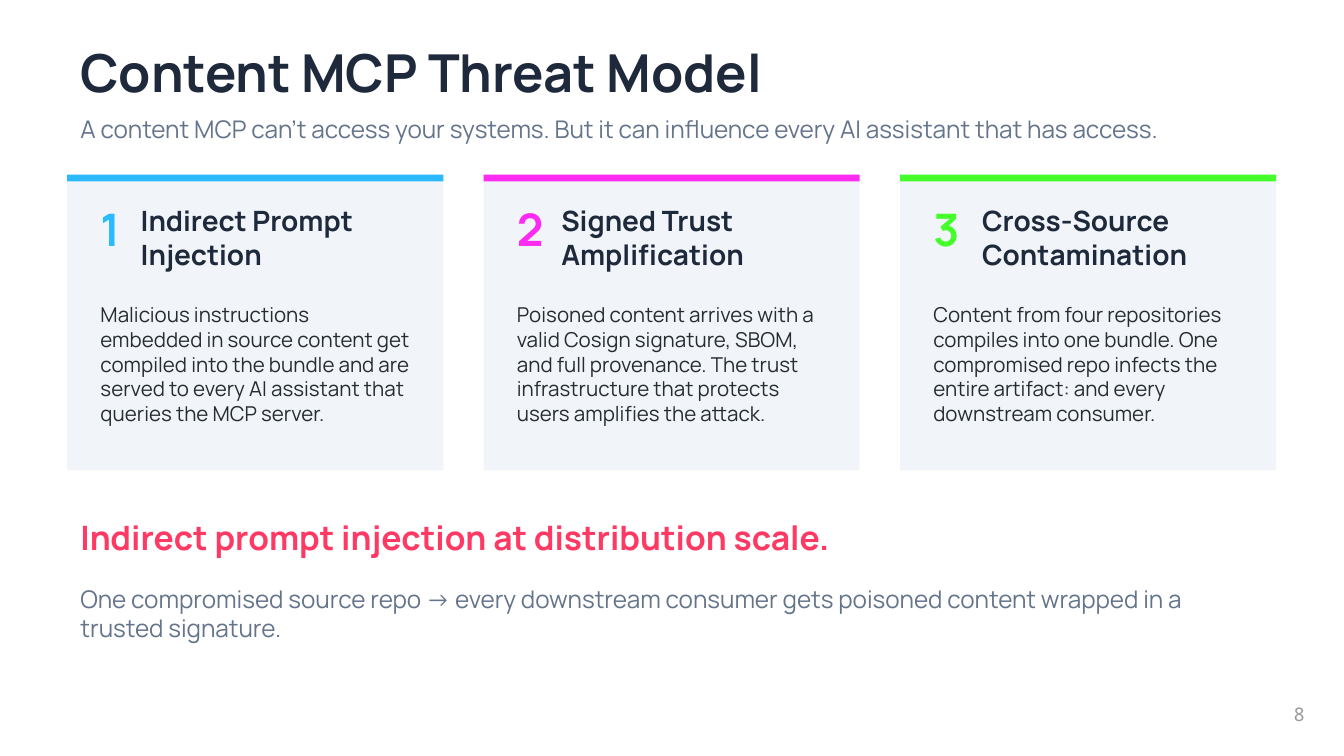
from dataclasses import dataclass

from pptx import Presentation
from pptx.dml.color import RGBColor
from pptx.enum import shapes, text
from pptx.slide import Slide
from pptx.util import Cm, Pt


@dataclass(frozen=True)
class Style:
    size: int
    color: str
    bold: bool = False
    font: str = "Manrope"


@dataclass(frozen=True)
class Theme:
    panel: str = "F1F5F9"
    title: Style = Style(28, "1E293B", True)
    subtitle: Style = Style(13, "64748B")
    heading: Style = Style(15, "1E293B", True)
    body: Style = Style(11, "252D33")
    takeaway: Style = Style(18, "FD3964", True)
    page: Style = Style(10, "999999", font="Noto Sans Mono")
    number_size: int = 24


@dataclass(frozen=True)
class Box:
    """Left, top, width and height in centimetres."""
    left: float
    top: float
    width: float
    height: float

    def lengths(self) -> tuple[Cm, Cm, Cm, Cm]:
        return Cm(self.left), Cm(self.top), Cm(self.width), Cm(self.height)


@dataclass(frozen=True)
class Threat:
    heading: str
    description: str
    accent: str
    description_height: float = 3.07


THEME = Theme()
MARGIN, CONTENT_WIDTH = 1.27, 22.86
CARD_TOP, CARD_WIDTH, CARD_HEIGHT, CARD_PITCH = 3.3, 7.11, 5.59, 7.87
HEADING_PITCH = 7.95

THREATS = [
    Threat("Indirect Prompt Injection",
           "Malicious instructions embedded in source content get compiled into "
           "the bundle and are served to every AI assistant that queries the MCP server.",
           "2BBAFD"),
    Threat("Signed Trust Amplification",
           "Poisoned content arrives with a valid Cosign signature, SBOM, and full "
           "provenance. The trust infrastructure that protects users amplifies the attack.",
           "FD2BF2"),
    Threat("Cross-Source Contamination",
           "Content from four repositories compiles into one bundle. One compromised "
           "repo infects the entire artifact: and every downstream consumer.",
           "44FD2B", 2.62),
]


def add_text(slide: Slide, box: Box, wording: str, style: Style) -> text.MSO_ANCHOR:
    frame = slide.shapes.add_textbox(*box.lengths()).text_frame
    frame.word_wrap = True
    frame.auto_size = text.MSO_AUTO_SIZE.SHAPE_TO_FIT_TEXT
    frame.vertical_anchor = text.MSO_ANCHOR.TOP
    frame.text = wording
    font = frame.paragraphs[0].runs[0].font
    font.name, font.size, font.bold = style.font, Pt(style.size), style.bold
    font.color.rgb = RGBColor.from_string(style.color)
    return frame


def add_panel(slide: Slide, box: Box, color: str) -> None:
    panel = slide.shapes.add_shape(shapes.MSO_SHAPE.RECTANGLE, *box.lengths())
    panel.shadow.inherit = False
    panel.fill.solid()
    panel.fill.fore_color.rgb = RGBColor.from_string(color)
    panel.line.fill.background()


def add_threat(slide: Slide, index: int, threat: Threat) -> None:
    left = MARGIN + index * CARD_PITCH
    inner_left = left + 0.38
    heading_left = MARGIN + 1.14 + index * HEADING_PITCH
    add_panel(slide, Box(left, CARD_TOP, CARD_WIDTH, CARD_HEIGHT), THEME.panel)
    add_panel(slide, Box(left, CARD_TOP, CARD_WIDTH, 0.13), threat.accent)
    add_text(slide, Box(inner_left, 3.68, 1.27, 1.27), str(index + 1),
             Style(THEME.number_size, threat.accent, True))
    add_text(slide, Box(heading_left, 3.73, 6.73, 1.55), threat.heading, THEME.heading)
    add_text(slide, Box(inner_left, 5.59, 6.35, threat.description_height),
             threat.description, THEME.body)


def add_page_number(slide: Slide, number: int) -> None:
    frame = add_text(slide, Box(23.39, 12.95, 1.52, 1.09), str(number), THEME.page)
    frame.auto_size = text.MSO_AUTO_SIZE.NONE
    frame.vertical_anchor = text.MSO_ANCHOR.MIDDLE
    frame.margin_top = frame.margin_bottom = Cm(0.25)
    frame.paragraphs[0].alignment = text.PP_ALIGN.RIGHT


def main() -> None:
    deck = Presentation()
    deck.slide_width, deck.slide_height = Cm(25.4), Cm(14.29)
    slide = deck.slides.add_slide(deck.slide_layouts[6])

    # Page number, title and subtitle
    add_page_number(slide, 8)
    add_text(slide, Box(MARGIN, 0.64, CONTENT_WIDTH, 1.45),
             "Content MCP Threat Model", THEME.title)
    add_text(slide, Box(MARGIN, 2.03, CONTENT_WIDTH, 0.81),
             "A content MCP can’t access your systems. But it can influence every "
             "AI assistant that has access.", THEME.subtitle)

    # Threat cards
    for index, threat in enumerate(THREATS):
        add_threat(slide, index, threat)

    # Takeaway
    add_text(slide, Box(MARGIN, 9.65, CONTENT_WIDTH, 1.02),
             "Indirect prompt injection at distribution scale.", THEME.takeaway)
    add_text(slide, Box(MARGIN, 10.92, CONTENT_WIDTH, 1.37),
             "One compromised source repo → every downstream consumer gets poisoned "
             "content wrapped in a trusted signature.", THEME.subtitle)

    deck.save("out.pptx")


if __name__ == "__main__":
    main()
